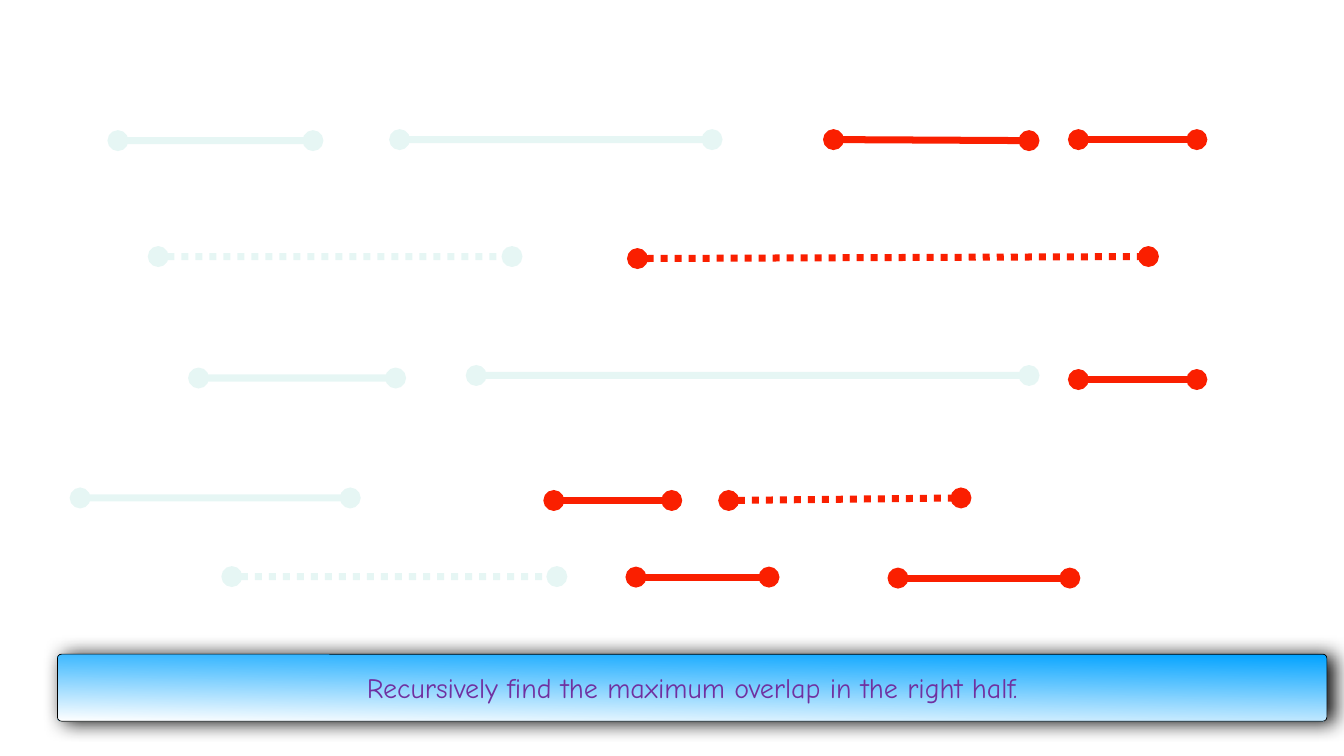
import pptx
import pptx.dml.color
import pptx.enum.dml
import pptx.enum.shapes
import pptx.enum.text
import pptx.oxml.ns
import pptx.util
from lxml import etree

PX = 9144  # EMU per px, 100 px to the inch
LEFT_HALF, RIGHT_HALF = "10AD9B", "FA1F00"
FADED, OPAQUE = 10, 100
SOLID = pptx.enum.dml.MSO_LINE.SOLID
DOTTED = pptx.enum.dml.MSO_LINE.ROUND_DOT

# (start x, start y, end x, end y, dash), relative to the diagram box
LEFT_INTERVALS = [
    (75, 2, 462, 2, SOLID), (634, 0, 1254, 0, SOLID),
    (155, 232, 857, 232, DOTTED),
    (235, 473, 626, 473, SOLID), (786, 468, 1883, 468, SOLID),
    (0, 711, 536, 711, SOLID),
    (301, 867, 946, 867, DOTTED),
]
RIGHT_INTERVALS = [
    (1495, 0, 1883, 2, SOLID), (1981, 0, 2216, 0, SOLID),
    (1106, 236, 2120, 232, DOTTED),
    (1981, 476, 2216, 476, SOLID),
    (940, 716, 1174, 716, SOLID), (1287, 716, 1748, 711, DOTTED),
    (1103, 868, 1367, 868, SOLID), (1623, 870, 1964, 870, SOLID),
]


def px(*lengths):
    return [pptx.util.Emu(length * PX) for length in lengths]


def rgb(hex_colour):
    return pptx.dml.color.RGBColor.from_string(hex_colour)


def add_xml(parent, tag, **attributes):
    return etree.SubElement(parent, pptx.oxml.ns.qn(tag), attributes)


def set_all(target, values):
    for name, value in values.items():
        setattr(target, name, value)


def set_opacity(colour_element, percent):
    add_xml(colour_element, "a:alpha", val=str(percent * 1000))


def add_interval(slide, box, interval, colour, opacity):
    """Draw one interval with a round dot at each end."""
    left, top = box[:2]
    start_x, start_y, end_x, end_y, dash = interval
    segment = slide.shapes.add_connector(
        pptx.enum.shapes.MSO_CONNECTOR.STRAIGHT,
        *px(left + start_x, top + start_y, left + end_x, top + end_y))
    segment.line.color.rgb = rgb(colour)
    set_all(segment.line, {"width": pptx.util.Pt(10), "dash_style": dash})
    properties = segment._element.spPr
    if opacity < OPAQUE:
        set_opacity(properties.find(".//" + pptx.oxml.ns.qn("a:srgbClr")), opacity)
    for end in ("a:headEnd", "a:tailEnd"):
        add_xml(properties.ln, end, type="oval")
    add_xml(properties, "a:effectLst")


def add_interval_diagram(slide, box):
    for intervals, colour, opacity in (
            (LEFT_INTERVALS, LEFT_HALF, FADED),
            (RIGHT_INTERVALS, RIGHT_HALF, OPAQUE)):
        for interval in intervals:
            add_interval(slide, box, interval, colour, opacity)


def add_banner(slide, box, message):
    banner = slide.shapes.add_shape(
        pptx.enum.shapes.MSO_SHAPE.ROUNDED_RECTANGLE, *px(*box))
    banner.adjustments[0] = 0.06

    banner.fill.gradient()
    banner.fill.gradient_angle = 269
    for stop, position, colour in zip(
            banner.fill.gradient_stops, (0, 1), ("00A2FF", "FFFFFF")):
        stop.position = position
        stop.color.rgb = rgb(colour)
    banner.line.color.rgb = rgb("000000")
    banner.line.width = pptx.util.Pt(1)

    banner.shadow.inherit = False
    effects = banner._element.spPr.find(pptx.oxml.ns.qn("a:effectLst"))
    shadow = add_xml(effects, "a:outerShdw", blurRad=str(pptx.util.Pt(28)),
                     dist=str(pptx.util.Pt(9)), dir="0", rotWithShape="0")
    set_opacity(add_xml(shadow, "a:srgbClr", val="000000"), 97)

    inset, = px(6)
    frame = banner.text_frame
    set_all(frame, {
        "word_wrap": True,
        "vertical_anchor": pptx.enum.text.MSO_ANCHOR.MIDDLE,
        "margin_left": inset, "margin_right": inset,
        "margin_top": inset, "margin_bottom": inset,
    })
    paragraph = frame.paragraphs[0]
    paragraph.alignment = pptx.enum.text.PP_ALIGN.CENTER
    sentence = paragraph.add_run()
    sentence.text = message
    set_all(sentence.font, {"name": "Comic Neue", "size": pptx.util.Pt(40)})
    sentence.font.color.rgb = rgb("7030A0")


def main():
    deck = pptx.Presentation()
    deck.slide_width, deck.slide_height = px(2667, 1500)
    slide = deck.slides.add_slide(deck.slide_layouts[6])
    add_interval_diagram(slide, (159, 277, 2216, 870))
    add_banner(slide, (114, 1298, 2519, 133),
               "Recursively find the maximum overlap in the right half.")
    deck.save("out.pptx")


if __name__ == "__main__":
    main()
